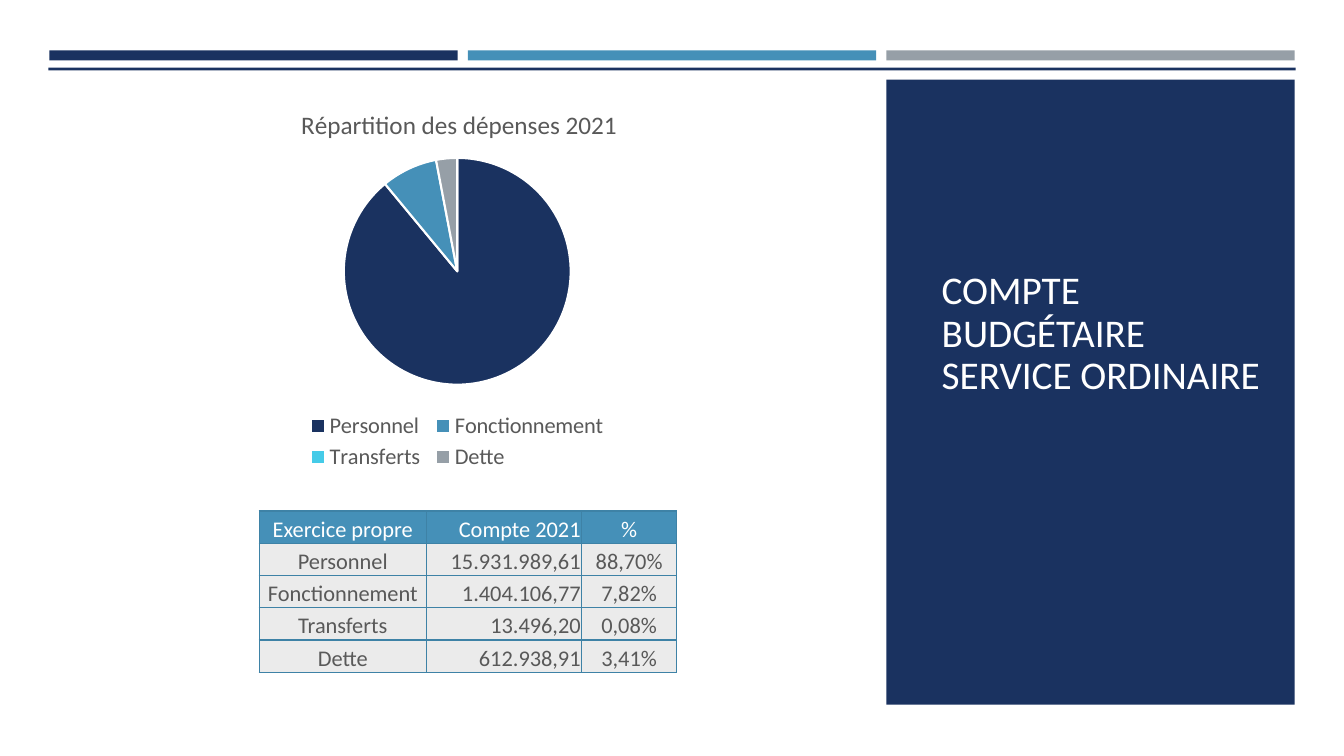
"""Build the slide on the 2021 ordinary budget account."""
from dataclasses import dataclass

from lxml import etree
from pptx import Presentation
from pptx.chart.data import CategoryChartData
from pptx.dml.color import RGBColor
from pptx.enum import chart as ch, shapes, text
from pptx.oxml import parse_xml
from pptx.oxml.ns import nsdecls, qn
from pptx.util import Inches, Pt

NAVY, BLUE, CYAN, GREY = "1A3260", "4590B8", "45CBE8", "969FA7"
WHITE, BODY, CELL, BORDER = "FFFFFF", "595959", "EBEBEB", "3E82A6"
FONT = "Calibri"


@dataclass
class Block:
    left: float
    top: float
    width: float
    height: float
    fill: str


@dataclass
class Expense:
    label: str
    amount: str
    percent: str
    share: int
    colour: str


BAR_WIDTH, BAR_PITCH, MARGIN = 4.05, 4.15, 0.49
BLOCKS = [
    Block(MARGIN + i * BAR_PITCH, 0.5, BAR_WIDTH, 0.1, fill)
    for i, fill in enumerate((NAVY, BLUE, GREY))
] + [
    Block(0.48, 0.67, 12.37, 0.03, NAVY),
    Block(MARGIN + 2 * BAR_PITCH, 0.79, BAR_WIDTH, 6.2, NAVY),
]
EXPENSES = [
    Expense("Personnel", "15.931.989,61", "88,70%", 89, NAVY),
    Expense("Fonctionnement", "1.404.106,77", "7,82%", 8, BLUE),
    Expense("Transferts", "13.496,20", "0,08%", 0, CYAN),
    Expense("Dette", "612.938,91", "3,41%", 3, GREY),
]


def rgb(colour: str) -> RGBColor:
    return RGBColor.from_string(colour)


def style(font, size: float, colour: str) -> None:
    font.name, font.size, font.bold = FONT, Pt(size), False
    font.color.rgb = rgb(colour)


def paint(target, colour: str) -> None:
    target.fill.solid()
    target.fill.fore_color.rgb = rgb(colour)


def draw_block(slide, block: Block) -> None:
    box = slide.shapes.add_shape(
        shapes.MSO_SHAPE.RECTANGLE, Inches(block.left), Inches(block.top),
        Inches(block.width), Inches(block.height))
    box.shadow.inherit = False
    paint(box, block.fill)
    box.line.fill.background()


def write_title(slide) -> None:
    title = slide.shapes.title
    title.left, title.top = Inches(9.24), Inches(1.72)
    title.width, title.height = Inches(3.37), Inches(2.28)
    frame = title.text_frame
    frame.text = "COMPTE BUDGÉTAIRE SERVICE ORDINAIRE"
    frame.word_wrap = True
    frame.auto_size = text.MSO_AUTO_SIZE.NONE
    frame.vertical_anchor = text.MSO_ANCHOR.BOTTOM
    heading = frame.paragraphs[0]
    heading.alignment = text.PP_ALIGN.LEFT
    heading.line_spacing = 0.9
    style(heading.runs[0].font, 28, WHITE)
    slide.shapes._spTree.append(title._element)


def place(part, anchors: tuple[str, ...], inner: bool = False, **spots: float) -> None:
    for old in part.findall(qn("c:layout")):
        part.remove(old)
    layout = parse_xml(f"<c:layout {nsdecls('c')}><c:manualLayout/></c:layout>")
    settings = {"layoutTarget": "inner"} if inner else {}
    settings |= {"xMode": "edge", "yMode": "edge"} | spots
    for name, value in settings.items():
        etree.SubElement(layout[0], qn(f"c:{name}")).set("val", str(value))
    before = [child for child in part if child.tag in map(qn, anchors)]
    part.insert(part.index(before[-1]) + 1 if before else 0, layout)


def draw_pie(slide) -> None:
    shares = CategoryChartData()
    shares.categories = [expense.label for expense in EXPENSES]
    shares.add_series("Dépenses 2021", [expense.share for expense in EXPENSES])
    pie = slide.shapes.add_chart(
        ch.XL_CHART_TYPE.PIE, Inches(1.69), Inches(0.83),
        Inches(5.69), Inches(3.88), shares).chart
    style(pie.font, 16, BODY)
    pie.has_title = True
    caption = pie.chart_title.text_frame
    caption.text = "Répartition des dépenses 2021"
    style(caption.paragraphs[0].runs[0].font, 18, BODY)
    pie.has_legend = True
    pie.legend.position = ch.XL_LEGEND_POSITION.BOTTOM
    pie.legend.include_in_layout = False
    style(pie.legend.font, 16, BODY)
    pie.plots[0].vary_by_categories = True
    for i, expense in enumerate(EXPENSES):
        sector = pie.plots[0].series[0].points[i].format
        paint(sector, expense.colour)
        sector.line.color.rgb = rgb(WHITE)
        sector.line.width = Pt(1.5)
    place(pie.chart_title._element, ("c:tx",), x=0.22, y=0.05)
    place(pie.legend._element, ("c:legendPos", "c:legendEntry"),
          x=0.23, y=0.83, w=0.54, h=0.17)
    place(pie._chartSpace.chart.plotArea, (), True, x=0.3, y=0.19, w=0.4, h=0.58)


def border(cell) -> None:
    properties = cell._tc.get_or_add_tcPr()
    for i, side in enumerate(("lnL", "lnR", "lnT", "lnB")):
        properties.insert(i, parse_xml(
            f'<a:{side} {nsdecls("a")} w="12700"><a:solidFill>'
            f'<a:srgbClr val="{BORDER}"/></a:solidFill></a:{side}>'))


def draw_table(slide) -> None:
    rows = [("Exercice propre", "Compte 2021", "%")]
    rows += [(expense.label, expense.amount, expense.percent) for expense in EXPENSES]
    accounts = slide.shapes.add_table(
        len(rows), 3, Inches(2.57), Inches(5.07), Inches(4.14), Inches(1.6)).table
    accounts.horz_banding = False
    for column, width in zip(accounts.columns, (1.66, 1.54, 0.94)):
        column.width = Inches(width)
    for r, row in enumerate(rows):
        accounts.rows[r].height = Inches(0.32)
        for c, entry in enumerate(row):
            cell = accounts.cell(r, c)
            cell.text_frame.text = entry
            cell.vertical_anchor = text.MSO_ANCHOR.BOTTOM
            cell.margin_left = cell.margin_right = cell.margin_top = Inches(0.01)
            cell.margin_bottom = 0
            paint(cell, CELL if r else BLUE)
            border(cell)
            line = cell.text_frame.paragraphs[0]
            line.alignment = text.PP_ALIGN.RIGHT if c == 1 else text.PP_ALIGN.CENTER
            style(line.runs[0].font, 16, BODY if r else WHITE)


def main() -> None:
    deck = Presentation()
    deck.slide_width, deck.slide_height = Inches(13.33), Inches(7.5)
    slide = deck.slides.add_slide(deck.slide_layouts[5])
    for block in BLOCKS:
        draw_block(slide, block)
    write_title(slide)
    draw_pie(slide)
    draw_table(slide)
    deck.save("out.pptx")


if __name__ == "__main__":
    main()
